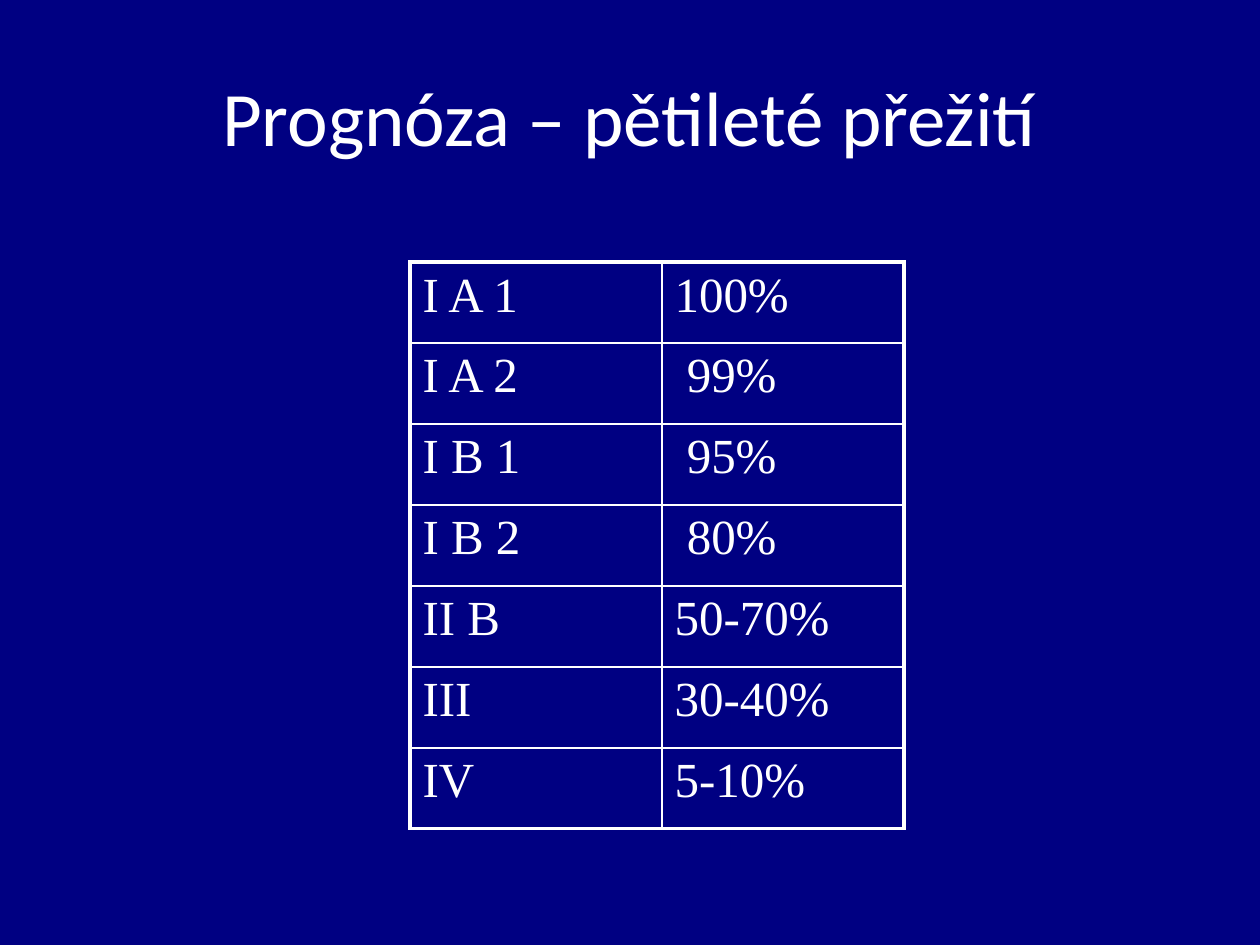
from lxml.etree import SubElement
from pptx import Presentation
from pptx.dml.color import RGBColor
from pptx.enum.text import MSO_ANCHOR, PP_ALIGN
from pptx.oxml.ns import qn
from pptx.util import Pt

EMU_PER_PX = 914400 / 126
NAVY = "000082"
WHITE = "FFFFFF"
SURVIVAL = [
    ("I A 1", "100%"),
    ("I A 2", " 99%"),
    ("I B 1", " 95%"),
    ("I B 2", " 80%"),
    ("II B", "50-70%"),
    ("III", "30-40%"),
    ("IV", "5-10%"),
]


def px(length):
    """Turn a length in px into EMU."""
    return round(length * EMU_PER_PX)


def color(value):
    """Turn a hex string into a colour."""
    return RGBColor.from_string(value)


class SlideBuilder:
    """Holds the style and the current slide."""

    title_font, title_size = "Calibri", 44
    table_font, table_size = "Times New Roman", 28
    outer_width, inner_width = 2.25, 1

    def __init__(self, presentation):
        """Add a title-only slide with a plain background."""
        self.slide = presentation.slides.add_slide(presentation.slide_layouts[5])
        fill = self.slide.background.fill
        fill.solid()
        fill.fore_color.rgb = color(NAVY)

    def run(self, paragraph, text, font, size):
        """Add one styled run to a paragraph."""
        run = paragraph.add_run()
        run.text = text
        run.font.name = font
        run.font.size = Pt(size)
        run.font.color.rgb = color(WHITE)

    def title(self, text, left, top, width, height):
        """Place and fill the title placeholder."""
        shape = self.slide.shapes.title
        shape.left, shape.top = px(left), px(top)
        shape.width, shape.height = px(width), px(height)
        shape.text_frame.vertical_anchor = MSO_ANCHOR.MIDDLE
        paragraph = shape.text_frame.paragraphs[0]
        paragraph.alignment = PP_ALIGN.CENTER
        self.run(paragraph, text, self.title_font, self.title_size)

    def border(self, cell, side, is_outer):
        """Draw one side of a cell."""
        width = Pt(self.outer_width if is_outer else self.inner_width)
        properties = cell._tc.get_or_add_tcPr()
        line = SubElement(properties, qn(f"a:ln{side}"), w=str(width))
        fill = SubElement(line, qn("a:solidFill"))
        SubElement(fill, qn("a:srgbClr"), val=WHITE)

    def cell(self, cell, text, outer_sides):
        """Fill a table cell and draw its borders."""
        for side in "LRTB":
            self.border(cell, side, side in outer_sides)
        cell.fill.background()
        paragraph = cell.text_frame.paragraphs[0]
        space = SubElement(paragraph._p.get_or_add_pPr(), qn("a:spcBef"))
        SubElement(space, qn("a:spcPct"), val="20000")
        self.run(paragraph, text, self.table_font, self.table_size)

    def table(self, rows, left, top, column_widths, row_height):
        """Add a table with a thick frame and thin inner lines."""
        last_row, last_column = len(rows) - 1, len(column_widths) - 1
        table = self.slide.shapes.add_table(
            len(rows), len(column_widths), px(left), px(top),
            px(sum(column_widths)), px(row_height * len(rows)),
        ).table
        table.first_row = table.horz_banding = False
        for column, width in zip(table.columns, column_widths):
            column.width = px(width)
        for row_index, values in enumerate(rows):
            table.rows[row_index].height = px(row_height)
            for column_index, text in enumerate(values):
                outer_sides = {
                    "L": column_index == 0,
                    "R": column_index == last_column,
                    "T": row_index == 0,
                    "B": row_index == last_row,
                }
                self.cell(
                    table.cell(row_index, column_index), text,
                    [side for side, is_outer in outer_sides.items() if is_outer],
                )


def main():
    """Build and save the presentation."""
    presentation = Presentation()
    presentation.slide_width, presentation.slide_height = px(1260), px(945)
    builder = SlideBuilder(presentation)
    builder.title("Prognóza – pětileté přežití", 94, 32, 1071, 168)
    builder.table(SURVIVAL, 410, 262, [252, 242], 81)
    presentation.save("out.pptx")


if __name__ == "__main__":
    main()
